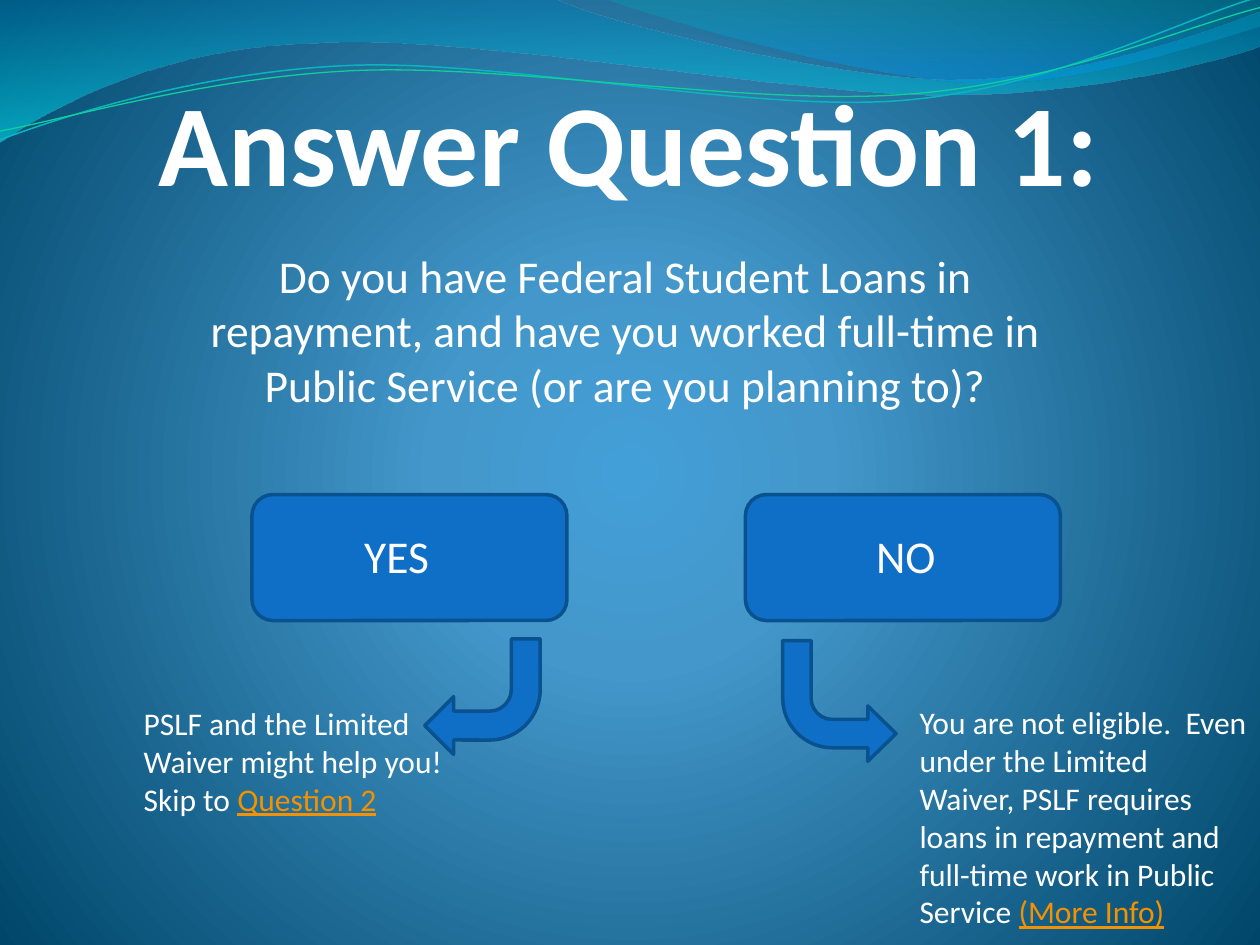
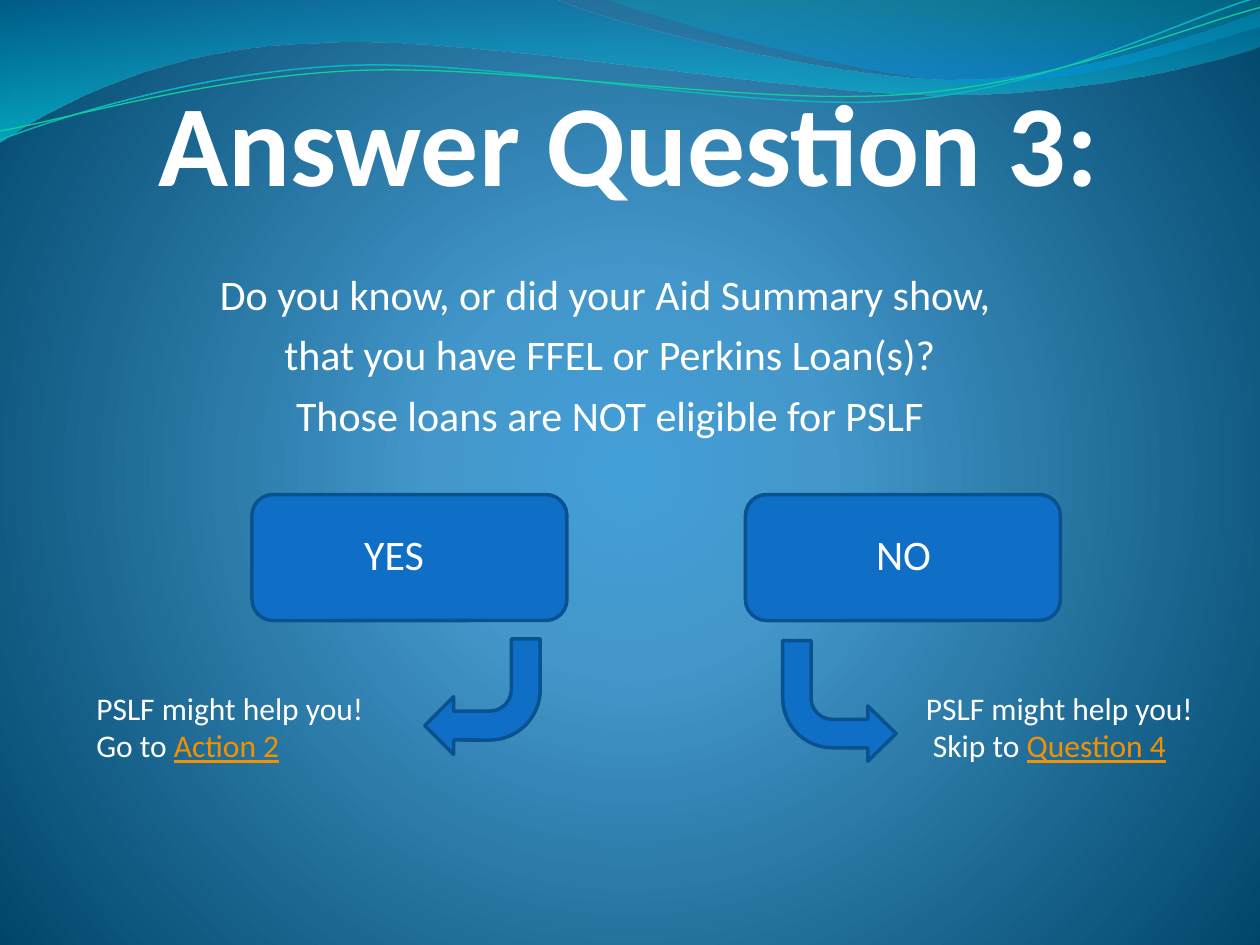
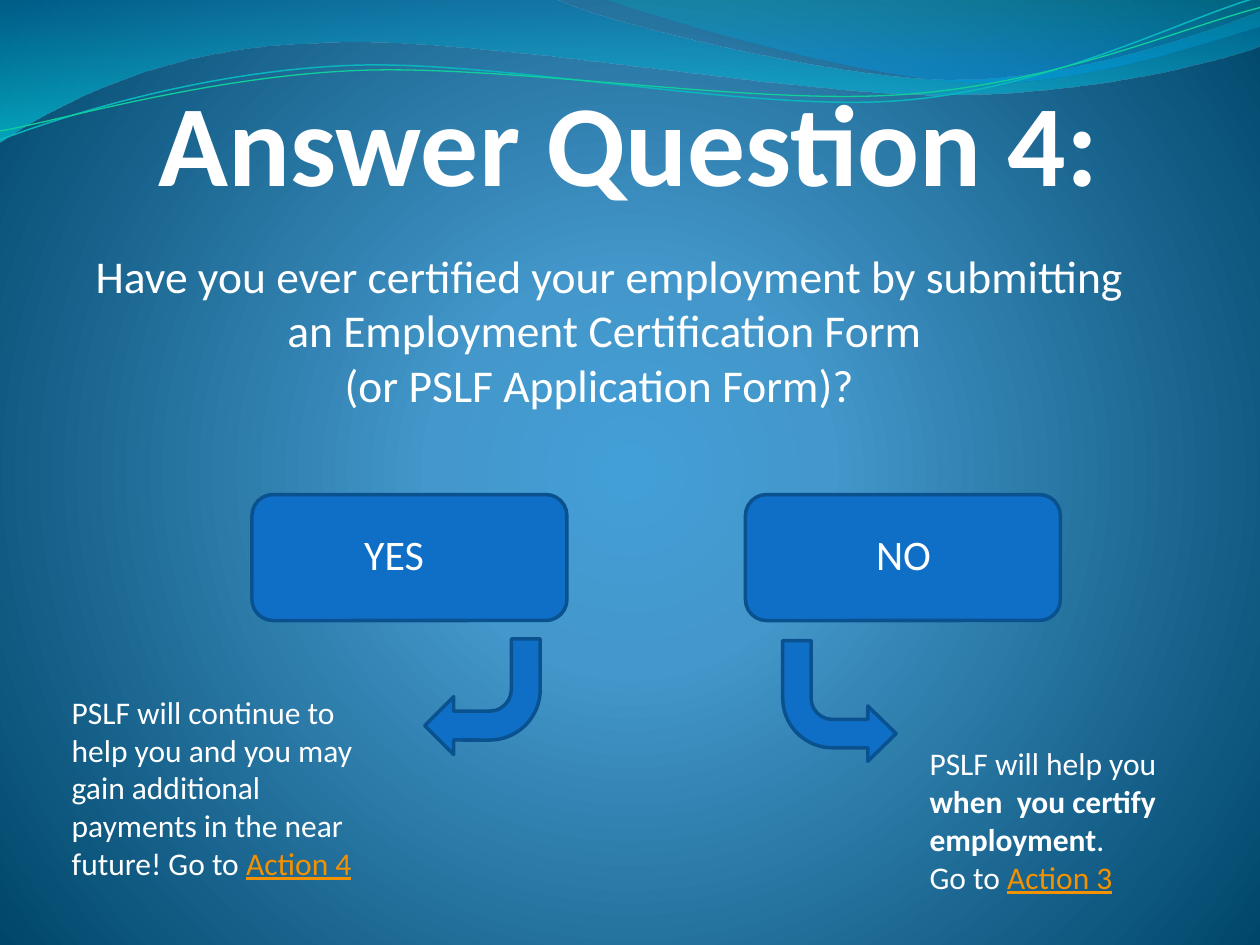
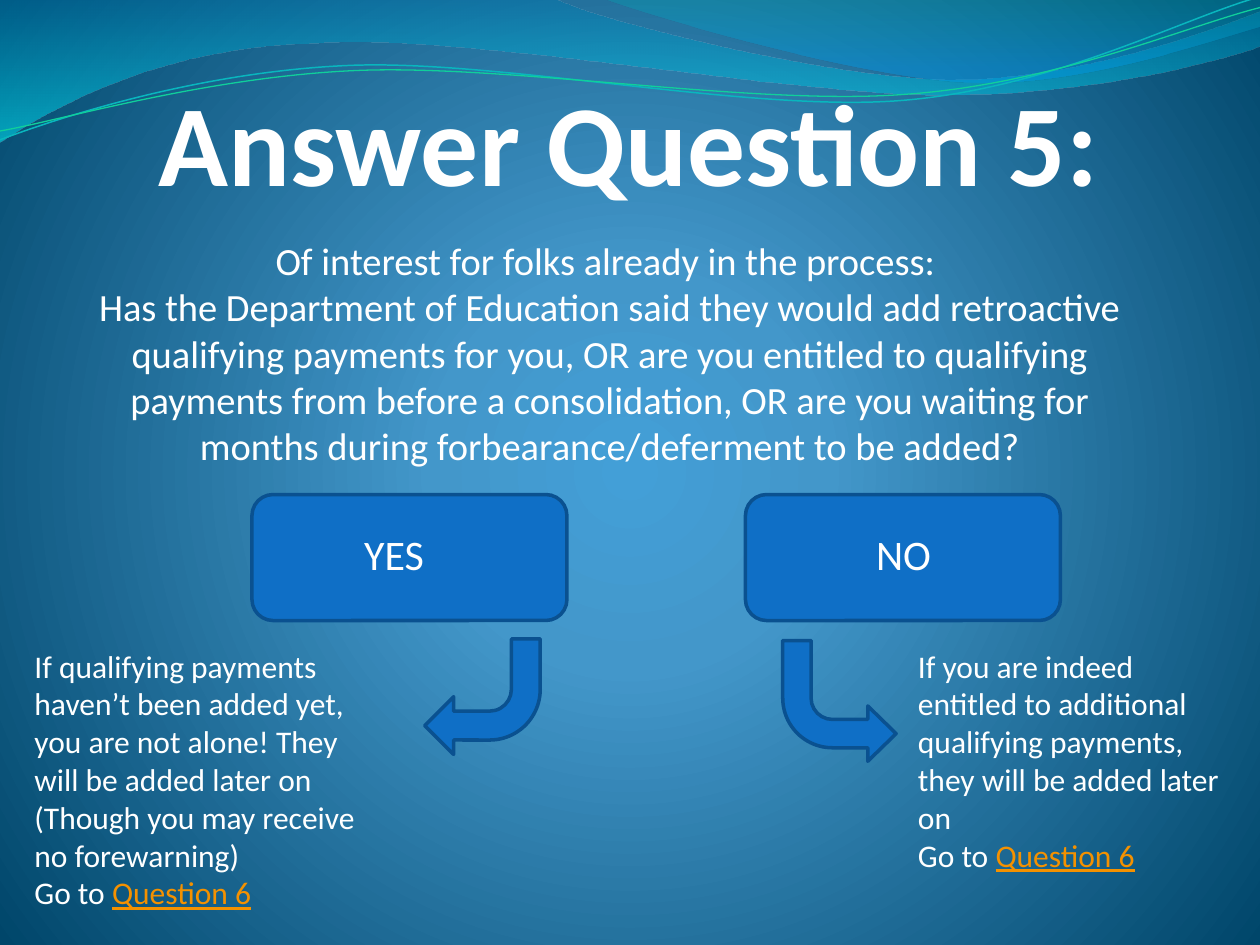
from lxml import etree
from pptx import Presentation
from pptx import util as u
from pptx.dml.color import RGBColor
from pptx.enum import shapes, text
from pptx.oxml.ns import nsdecls, qn

WHITE = RGBColor(0xFF, 0xFF, 0xFF)
LINK = RGBColor(0xF4, 0x91, 0x00)
BLUE = RGBColor(0x0F, 0x6F, 0xC6)
BLUE_EDGE = RGBColor(0x0A, 0x51, 0x90)
GLOW = RGBColor(0x43, 0x9F, 0xD7)
MID = RGBColor(0x43, 0x97, 0xCA)
DEEP = RGBColor(0x00, 0x46, 0x6A)
NAVY = RGBColor(0x00, 0x79, 0xAD)
CYAN = RGBColor(0x00, 0xE9, 0xF7)
TEAL = RGBColor(0x00, 0xAB, 0xB4)
AZURE = RGBColor(0x00, 0x99, 0xE4)
TEAL_LINE = RGBColor(0x09, 0xB6, 0xBE)
GREEN_LINE = RGBColor(0x10, 0xCF, 0x9B)
FONT = "Calibri"

deck = Presentation()
deck.slide_width, deck.slide_height = u.Inches(10), u.Inches(7.5)
CELL = deck.slide_width // 120
master = deck.slide_master
blank = deck.slide_layouts[6]


def gradient(parent, old_fill, stops, direction):
    marks = "".join(
        f'<a:gs pos="{at * 1000}"><a:srgbClr val="{color}"><a:alpha val="{alpha * 1000}"/></a:srgbClr></a:gs>'
        for at, color, alpha in stops
    )
    fill = etree.fromstring(
        f'<a:gradFill {nsdecls("a")} rotWithShape="1"><a:gsLst>{marks}</a:gsLst>{direction}</a:gradFill>'
    )
    parent.replace(parent.find(qn(old_fill)), fill)


def write(slide, box, paragraphs, size, align=None, insets=(0.1, 0.05, 0.1, 0.05), bold=False, gap=0):
    frame = slide.shapes.add_textbox(*[round(v * CELL) for v in box]).text_frame
    frame.word_wrap = True
    frame.margin_left, frame.margin_top, frame.margin_right, frame.margin_bottom = map(u.Inches, insets)
    for number, runs in enumerate(paragraphs):
        paragraph = frame.paragraphs[0] if number == 0 else frame.add_paragraph()
        paragraph.alignment = align
        if number and gap:
            paragraph.space_before = u.Pt(gap)
        for words, style in runs:
            run = paragraph.add_run()
            run.text = words
            run.font.name = FONT
            run.font.size = u.Pt(size)
            run.font.color.rgb = LINK if style == "link" else WHITE
            if bold or style == "bold":
                run.font.bold = True
            if style == "link":
                run.font.underline = True
    return frame


master.background.fill.solid()
gradient(
    master.element.find(".//" + qn("p:bgPr")), "a:solidFill",
    [(0, GLOW, 100), (25, MID, 100), (100, DEEP, 100)],
    '<a:path path="circle"><a:fillToRect l="50000" t="50000" r="50000" b="50000"/></a:path>',
)

WAVES = [
    ((0, 0), [
        [(4.4, -0.01)],
        [(4.76, 0.17), (6.64, 0.63), (7.58, 0.63)],
        [(8.53, 0.63), (9.58, 0.26), (10, 0.09)],
        [(10.01, 0.36)],
        [(9.83, 0.44), (8.7, 0.76), (7.46, 0.75)],
        [(6.22, 0.75), (3.82, 0.28), (2.57, 0.34)],
        [(1.29, 0.36), (0.46, 0.83), (-0.01, 1.13)],
        [(0, 0)],
    ], [(0, NAVY, 45), (100, CYAN, 55)], None),
    ((4.79, -0.01), [
        [(5.09, 0.11), (6.82, 0.62), (7.69, 0.65)],
        [(8.56, 0.69), (9.61, 0.32), (10, 0.21)],
        [(10, 0)],
        [(4.79, -0.01)],
    ], [(0, TEAL, 30), (80, AZURE, 45), (100, AZURE, 45)], None),
    ((0, 1.11), [
        [(0.48, 0.93), (1.58, 0.57), (2.77, 0.52)],
        [(3.95, 0.47), (5.93, 0.89), (7.13, 0.8)],
        [(8.33, 0.71), (9.38, 0.15), (9.98, -0.02)],
    ], None, (TEAL_LINE, 0.85)),
    ((0, 1.04), [
        [(0.47, 0.96), (1.64, 0.61), (2.83, 0.56)],
        [(4.03, 0.51), (5.97, 0.84), (7.17, 0.75)],
        [(8.36, 0.67), (9.41, 0.21), (10, 0.06)],
    ], None, (GREEN_LINE, 0.75)),
]

QUESTIONS = [
    {
        "number": 1, "size": 26, "label_size": 26, "gap": 0, "ask_box": (18, 23, 84, 51),
        "ask": ["Do you have Federal Student Loans in repayment, and have you worked full-time in Public Service (or are you planning to)?"],
        "answers": [
            ((86.4, 66.4, 33.6, 23), [[
                ("You are not eligible.  Even under the Limited Waiver, PSLF requires loans in repayment and full-time work in Public Service ", ""),
                ("(More Info)", "link")]]),
            ((12.5, 66.5, 32, 12.1), [
                [("PSLF and the Limited Waiver might help you!", "")],
                [("Skip to ", ""), ("Question 2", "link")]]),
        ],
    },
    {
        "number": 3, "size": 24, "label_size": 24, "gap": 5.6, "ask_box": (7, 25, 103, 40.3),
        "ask": ["Do you know, or did your Aid Summary show, ",
                "that you have FFEL or Perkins Loan(s)?",
                "Those loans are NOT eligible for PSLF"],
        "answers": [
            ((87, 65, 28, 8.5), [[("PSLF might help you!  Skip to ", ""), ("Question 4", "link")]]),
            ((8, 65, 31, 8.5), [[("PSLF might help you!  Go to ", ""), ("Action 2", "link")]]),
        ],
    },
    {
        "number": 4, "size": 26, "label_size": 24, "gap": 0, "ask_box": (7, 23, 103, 42.3),
        "ask": ["Have you ever certified your employment by submitting an Employment Certification Form ",
                "(or PSLF Application Form)?  "],
        "answers": [
            ((5.65, 65.4, 32, 19.4), [[
                ("PSLF will continue to help you and you may gain additional payments in the near future! Go to ", ""),
                ("Action 4", "link")]]),
            ((87.35, 70.3, 27.6, 15.7), [
                [("PSLF will help you ", ""), ("when  you certify employment", "bold"), (".", "")],
                [("Go to ", ""), ("Action 3", "link")]]),
        ],
    },
    {
        "number": 5, "size": 22, "label_size": 24, "gap": 0, "ask_box": (7, 22, 103, 43.3),
        "ask": ["Of interest for folks already in the process: ",
                "Has the Department of Education said they would add retroactive qualifying payments for you, OR are you entitled to qualifying payments from before a consolidation, OR are you waiting for months during forbearance/deferment to be added?"],
        "answers": [
            ((2.1, 61, 34.8, 26.6), [
                [("If qualifying payments haven’t been added yet, you are not alone! They will be added later on  (Though you may receive no forewarning)", "")],
                [("Go to ", ""), ("Question 6", "link")]]),
            ((86.25, 61, 31.7, 26.6), [
                [("If you are indeed entitled to additional qualifying payments, they will be added later on", "")],
                [("Go to ", ""), ("Question 6", "link")]]),
        ],
    },
]

slides = [deck.slides.add_slide(blank) for _ in QUESTIONS]

for start, segments, stops, stroke in WAVES:
    builder = slides[0].shapes.build_freeform(u.Inches(start[0]), u.Inches(start[1]))
    anchors = [(u.Inches(segment[-1][0]), u.Inches(segment[-1][1])) for segment in segments]
    builder.add_line_segments(anchors, close=stroke is None)
    wave = builder.convert_to_shape()
    for line, segment in zip(list(wave.element.iter(qn("a:lnTo"))), segments):
        if len(segment) == 3:
            curve = etree.SubElement(line.getparent(), qn("a:cubicBezTo"))
            for x, y in segment:
                etree.SubElement(curve, qn("a:pt"), x=str(u.Inches(x) - wave.left), y=str(u.Inches(y) - wave.top))
            line.getparent().replace(line, curve)
    wave.shadow.inherit = False
    wave.fill.background()
    if stroke:
        wave.line.color.rgb, wave.line.width = stroke[0], u.Pt(stroke[1])
    else:
        wave.line.fill.background()
        gradient(wave.element.spPr, "a:noFill", stops, '<a:lin ang="5400000" scaled="0"/>')
    master.element.cSld.spTree.append(wave.element)

CHOICES = [
    ("YES", (24, 47.1, 30, 12), (33.5, 49.7, 11, 6.2), (40.45, 60.85, 11, 11), 0.25, False),
    ("NO", (71, 47.1, 30, 12), (82.25, 49.7, 9.5, 6.2), (74.55, 61, 10.8, 11.5), 0.244, True),
]

for slide, question in zip(slides, QUESTIONS):
    title = write(slide, (8.5, 3.75, 103, 19.2), [[(f"Answer Question {question['number']}:", "")]], 66,
                  text.PP_ALIGN.CENTER, (0, 0, 0.02, 0), bold=True)
    title.vertical_anchor = text.MSO_ANCHOR.MIDDLE
    write(slide, question["ask_box"], [[(line, "")] for line in question["ask"]], question["size"],
          text.PP_ALIGN.CENTER, (0, 0.05, 0.07, 0.05), gap=question["gap"])

    for choice, button_box, label_box, arrow_box, head, mirrored in CHOICES:
        for kind, box, adjustments in (
            (shapes.MSO_SHAPE.ROUNDED_RECTANGLE, button_box, [0.167]),
            (shapes.MSO_SHAPE.BENT_ARROW, arrow_box, [0.25, head, 0.25, 0.438]),
        ):
            part = slide.shapes.add_shape(kind, *[round(v * CELL) for v in box])
            part.shadow.inherit = False
            part.fill.solid()
            part.fill.fore_color.rgb = BLUE
            part.line.color.rgb, part.line.width = BLUE_EDGE, u.Pt(2)
            for index, value in enumerate(adjustments):
                part.adjustments[index] = value
            if kind == shapes.MSO_SHAPE.BENT_ARROW:
                part.rotation = 180
                if mirrored:
                    part.element.spPr.xfrm.set("flipH", "1")
        label = write(slide, label_box, [[(choice, "")]], question["label_size"])
        label.auto_size = text.MSO_AUTO_SIZE.SHAPE_TO_FIT_TEXT

    for box, paragraphs in question["answers"]:
        answer = write(slide, box, paragraphs, 18)
        answer.auto_size = text.MSO_AUTO_SIZE.SHAPE_TO_FIT_TEXT

deck.save("out.pptx")
